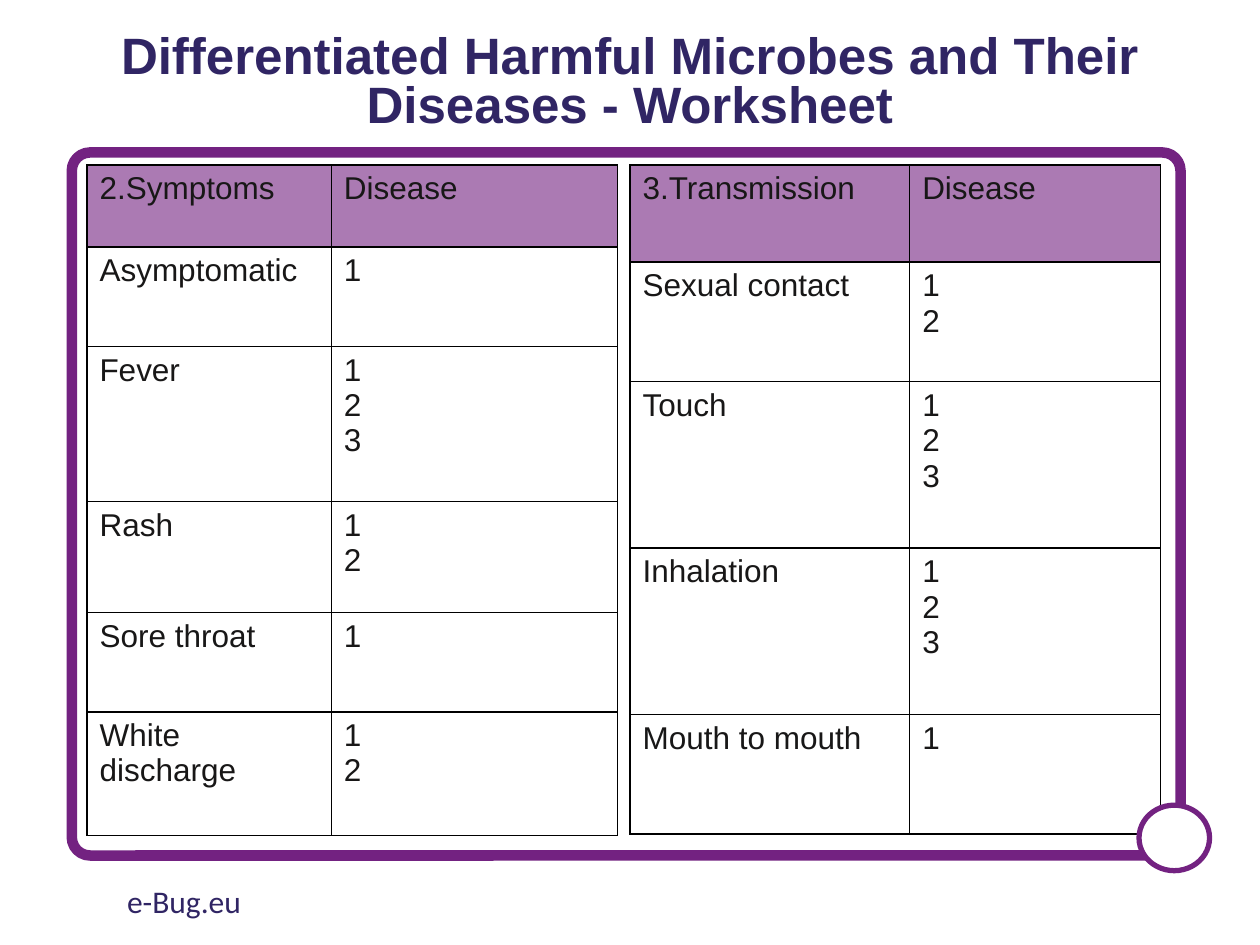
from lxml import etree
from pptx import Presentation
from pptx.dml.color import RGBColor
from pptx.enum import shapes, text
from pptx.oxml import ns
from pptx.util import Inches, Pt

# Content
TITLE = "Differentiated Harmful Microbes and Their Diseases - Worksheet"
FOOTER = "e-Bug.eu"
WORKSHEETS = [
    {
        "left": 0.69,
        "columns": [1.94, 2.27],
        "heights": [0.65, 0.79, 1.23, 0.88, 0.79, 0.98],
        "header": ("2.Symptoms", "Disease"),
        # Each topic with its number of answer lines
        "topics": [("Asymptomatic", 1), ("Fever", 3), ("Rash", 2),
                   ("Sore throat", 1), ("White discharge", 2)],
    },
    {
        "left": 5,
        "columns": [2.22, 1.99],
        "heights": [0.77, 0.95, 1.32, 1.32, 0.95],
        "header": ("3.Transmission", "Disease"),
        "topics": [("Sexual contact", 2), ("Touch", 3),
                   ("Inhalation", 3), ("Mouth to mouth", 1)],
    },
]
TABLE_TOP = 1.31
NAVY, PURPLE, INK, WHITE, BLACK = "302564", "732281", "181717", "FFFFFF", "000000"


def paint(target, colour):
    """Set a font, or a fill already made solid, to a hex colour."""
    target.rgb = RGBColor.from_string(colour)


def style_text(frame, font, size, colour, bold=False):
    for paragraph in frame.paragraphs:
        for run in paragraph.runs:
            run.font.name, run.font.size, run.font.bold = font, Pt(size), bold
            paint(run.font.color, colour)


def place(item, left, top, width, height):
    item.left, item.top = Inches(left), Inches(top)
    item.width, item.height = Inches(width), Inches(height)


def add_borders(cell):
    properties = cell._tc.get_or_add_tcPr()
    for index, side in enumerate(("lnL", "lnR", "lnT", "lnB")):
        line = etree.Element(ns.qn(f"a:{side}"), w=str(Pt(1)))
        fill = etree.SubElement(line, ns.qn("a:solidFill"))
        etree.SubElement(fill, ns.qn("a:srgbClr"), val=BLACK)
        properties.insert(index, line)


def fill_header(cell):
    cell.fill.solid()
    paint(cell.fill.fore_color, PURPLE)
    colour = cell._tc.tcPr.find(".//" + ns.qn("a:srgbClr"))
    etree.SubElement(colour, ns.qn("a:alpha"), val="60000")


def add_worksheet(slide, sheet):
    answers = [(topic, "\n".join(str(n + 1) for n in range(count)))
               for topic, count in sheet["topics"]]
    rows = [sheet["header"]] + answers
    table = slide.shapes.add_table(
        len(rows), 2, Inches(sheet["left"]), Inches(TABLE_TOP),
        Inches(sum(sheet["columns"])), Inches(sum(sheet["heights"]))).table
    table.horz_banding = table.first_row = False
    for column, width in zip(table.columns, sheet["columns"]):
        column.width = Inches(width)
    for r, (row, height) in enumerate(zip(rows, sheet["heights"])):
        table.rows[r].height = Inches(height)
        for c, words in enumerate(row):
            cell = table.cell(r, c)
            cell.text_frame.text = words
            style_text(cell.text_frame, "Arial", 18, INK)
            if r == 0:
                fill_header(cell)
            else:
                cell.fill.background()
            add_borders(cell)


def add_outline(slide, preset, box, weight):
    shape = slide.shapes.add_shape(preset, *map(Inches, box))
    shape.shadow.inherit = False
    shape.fill.background()
    paint(shape.line.color, PURPLE)
    shape.line.width = Pt(weight)
    return shape


def main():
    deck = Presentation()
    deck.slide_width, deck.slide_height = Inches(10), Inches(7.5)
    slide = deck.slides.add_slide(deck.slide_layouts[5])

    # Title
    title = slide.shapes.title
    place(title, 0.69, 0.2, 8.62, 0.94)
    title.text_frame.text = TITLE
    title.text_frame.auto_size = text.MSO_AUTO_SIZE.NONE
    title.text_frame.vertical_anchor = text.MSO_ANCHOR.MIDDLE
    title.text_frame.paragraphs[0].alignment = text.PP_ALIGN.CENTER
    title.text_frame.paragraphs[0].line_spacing = 0.8
    style_text(title.text_frame, "Arial", 29.2, NAVY, bold=True)

    # Worksheet tables
    for sheet in WORKSHEETS:
        add_worksheet(slide, sheet)

    # Frame with its corner circle
    frame = add_outline(slide, shapes.MSO_SHAPE.ROUNDED_RECTANGLE,
                        (0.57, 1.21, 8.8, 5.58), 6)
    frame.adjustments[0] = 0.026
    circle = add_outline(slide, shapes.MSO_SHAPE.OVAL, (9.04, 6.39, 0.56, 0.52), 3)
    circle.fill.solid()
    paint(circle.fill.fore_color, WHITE)

    # Footer
    footer = slide.shapes.add_textbox(*map(Inches, (0.91, 6.95, 3.38, 0.4)))
    footer.text_frame.word_wrap = True
    footer.text_frame.text = FOOTER
    style_text(footer.text_frame, "Calibri", 18, NAVY)

    deck.save("out.pptx")


if __name__ == "__main__":
    main()
